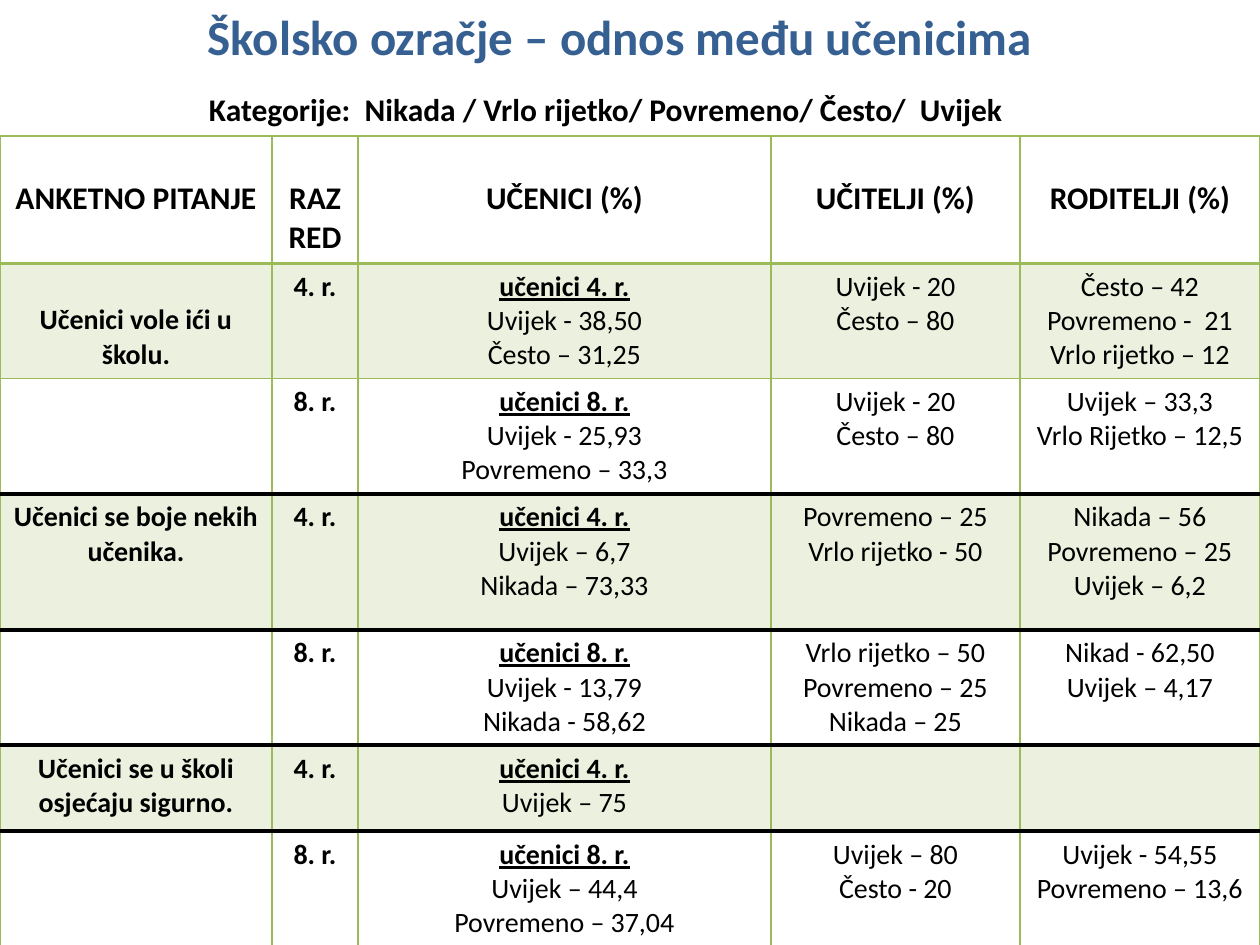
from lxml import etree
from pptx import Presentation, util as u
from pptx.dml.color import RGBColor
from pptx.enum import text
from pptx.oxml.ns import qn

HUE = {"blue": "376092", "green": "9BBB59", "pale": "EBF1DE", "black": "000000"}


def px(n):
    return u.Emu(round(n * 914400 / 126))


def put(frame, words, size=16, bold=False, hue="black", head=False):
    frame.word_wrap = True
    for i, line in enumerate(words.split("\n")):
        para = frame.paragraphs[0] if i == 0 else frame.add_paragraph()
        para.alignment = text.PP_ALIGN.CENTER
        run = para.add_run()
        run.text = line
        font = run.font
        font.name = "Calibri"
        font.size = u.Pt(size)
        font.bold = bold or (head and i == 0)
        font.underline = head and i == 0
        font.color.rgb = RGBColor.from_string(HUE[hue])


deck = Presentation()
deck.slide_width, deck.slide_height = px(1260), px(945)
slide = deck.slides.add_slide(deck.slide_layouts[5])

cols = [272, 86, 413, 249, 240]
rows = [127, 115, 115, 136, 115, 86, 115]
cells = [
    ["ANKETNO PITANJE", "RAZRED", "UČENICI (%)", "UČITELJI (%)", "RODITELJI (%)"],
    ["Učenici vole ići u školu.", "4. r.",
     "učenici 4. r.\nUvijek - 38,50\nČesto – 31,25",
     "Uvijek - 20\nČesto – 80",
     "Često – 42\nPovremeno -  21\nVrlo rijetko – 12"],
    ["", "8. r.",
     "učenici 8. r.\nUvijek - 25,93\nPovremeno – 33,3",
     "Uvijek - 20\nČesto – 80",
     "Uvijek – 33,3\nVrlo Rijetko – 12,5"],
    ["Učenici se boje nekih učenika.", "4. r.",
     "učenici 4. r.\nUvijek – 6,7\nNikada – 73,33",
     "Povremeno – 25\nVrlo rijetko - 50",
     "Nikada – 56\nPovremeno – 25\nUvijek – 6,2"],
    ["", "8. r.",
     "učenici 8. r.\nUvijek - 13,79\nNikada - 58,62",
     "Vrlo rijetko – 50\nPovremeno – 25\nNikada – 25",
     "Nikad - 62,50\nUvijek – 4,17"],
    ["Učenici se u školi osjećaju sigurno.", "4. r.",
     "učenici 4. r.\nUvijek – 75", "", ""],
    ["", "8. r.",
     "učenici 8. r.\nUvijek – 44,4\nPovremeno – 37,04",
     "Uvijek – 80\nČesto - 20",
     "Uvijek - 54,55\nPovremeno – 13,6"],
]
thin = ("green", 1)
thick = ("black", 2.25)
rules = [thin, ("green", 2), thin, thick, thick, thick, thick, thin]

grid = slide.shapes.add_table(len(rows), len(cols), 0, px(136),
                              px(sum(cols)), px(sum(rows))).table
for col, wide in zip(grid.columns, cols):
    col.width = px(wide)
for r, line in enumerate(cells):
    grid.rows[r].height = px(rows[r])
    for c, words in enumerate(line):
        cell = grid.cell(r, c)
        props = cell._tc.get_or_add_tcPr()
        edges = {"lnL": thin, "lnR": thin, "lnT": rules[r], "lnB": rules[r + 1]}
        for side, (hue, wide) in edges.items():
            edge = etree.SubElement(props, qn("a:" + side), w=str(u.Pt(wide)))
            fill = etree.SubElement(edge, qn("a:solidFill"))
            etree.SubElement(fill, qn("a:srgbClr"), val=HUE[hue])
        if r % 2:
            cell.fill.solid()
            cell.fill.fore_color.rgb = RGBColor.from_string(HUE["pale"])
        else:
            cell.fill.background()
        if r == 0:
            cell.margin_top = px(44)
        elif r == 1 and c == 0:
            cell.margin_top = px(40)
        if words:
            put(cell.text_frame, words, size=16 if r else 18,
                bold=r == 0 or c < 2, head=r > 0 and c == 2)

title = slide.shapes.title
title.left, title.top, title.width, title.height = px(84), px(0), px(1071), px(72)
title.text_frame.vertical_anchor = text.MSO_ANCHOR.TOP
put(title.text_frame, "Školsko ozračje – odnos među učenicima",
    size=28, bold=True, hue="blue")

note = slide.shapes.add_textbox(px(116), px(84), px(987), px(50))
put(note.text_frame, "Kategorije:  Nikada / Vrlo rijetko/ Povremeno/ Često/  Uvijek ",
    size=18, bold=True)

deck.save("out.pptx")
